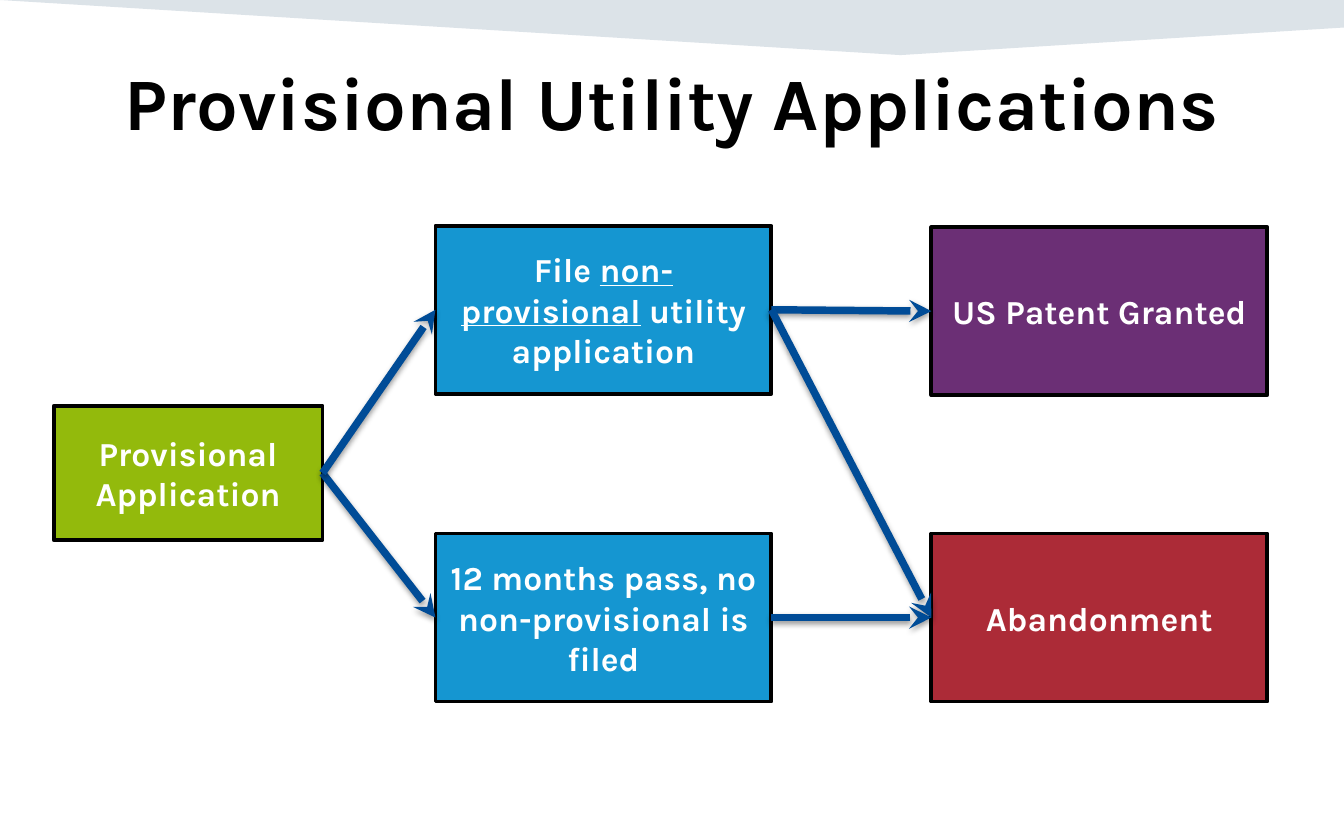
from dataclasses import dataclass

from lxml.etree import SubElement
from pptx import Presentation
from pptx.dml.color import RGBColor
from pptx.enum.shapes import MSO_CONNECTOR as Connector, MSO_SHAPE as Shape
from pptx.enum.text import MSO_ANCHOR as Anchor, MSO_AUTO_SIZE as AutoSize, PP_ALIGN as Align
from pptx.oxml.ns import qn
from pptx.util import Inches, Pt


@dataclass(frozen=True)
class Theme:
    font: str = "Karla"
    title_size: float = 39.6
    label_size: float = 18
    black: str = "000000"
    white: str = "FFFFFF"
    band: str = "164469"
    green: str = "93BA0C"
    blue: str = "1596D1"
    purple: str = "6B2F75"
    red: str = "AC2B37"
    arrow: str = "004C97"


THEME = Theme()
WIDTH, HEIGHT = 10, 6.25
LEFT_SIDE, RIGHT_SIDE = 1, 3


def rgb(value):
    return RGBColor.from_string(value)


def add_node(parent, tag, **attributes):
    return SubElement(parent, qn(tag), {key: str(value) for key, value in attributes.items()})


def write(frame, *parts, size, color, anchor, underlined=()):
    frame.word_wrap = True
    frame.auto_size = AutoSize.NONE
    frame.vertical_anchor = anchor
    paragraph = frame.paragraphs[0]
    paragraph.alignment = Align.CENTER
    for part in parts:
        run = paragraph.add_run()
        run.text = part
        run.font.name = THEME.font
        run.font.size = Pt(size)
        run.font.bold = True
        run.font.color.rgb = rgb(color)
        if part in underlined:
            run.font.underline = True


def draw_band(slide, width, height):
    corners = [(0, 0), (width, 0), (width, height / 2), (width * 0.67, height)]
    points = [(Inches(x), Inches(y)) for x, y in corners]
    builder = slide.shapes.build_freeform(*points[0])
    builder.add_line_segments(points[1:], close=True)
    band = builder.convert_to_shape()
    band.shadow.inherit = False
    band.fill.solid()
    band.fill.fore_color.rgb = rgb(THEME.band)
    band.line.fill.background()
    tint = band._element.spPr.find(qn("a:solidFill"))[0]
    add_node(tint, "a:alpha", val=15000)
    slide.shapes._spTree.insert(2, band._element)


def place_title(slide, box, text):
    title = slide.shapes.title
    title.left, title.top, title.width, title.height = map(Inches, box)
    title.text_frame.margin_top = Inches(0.08)
    write(title.text_frame, text, size=THEME.title_size, color=THEME.black, anchor=Anchor.TOP)


def add_step(slide, box, fill, *parts, underlined=()):
    step = slide.shapes.add_shape(Shape.RECTANGLE, *map(Inches, box))
    step.shadow.inherit = False
    step.fill.solid()
    step.fill.fore_color.rgb = rgb(fill)
    step.line.color.rgb = rgb(THEME.black)
    step.line.width = Pt(2)
    write(step.text_frame, *parts, size=THEME.label_size, color=THEME.white,
          anchor=Anchor.MIDDLE, underlined=underlined)
    return step


def add_arrow(slide, source, target):
    arrow = slide.shapes.add_connector(Connector.STRAIGHT, 0, 0, 0, 0)
    arrow.begin_connect(source, RIGHT_SIDE)
    arrow.end_connect(target, LEFT_SIDE)
    arrow.line.color.rgb = rgb(THEME.arrow)
    arrow.line.width = Pt(4)
    properties = arrow._element.spPr
    add_node(properties.find(qn("a:ln")), "a:tailEnd", type="stealth")
    effects = add_node(properties, "a:effectLst")
    shadow = add_node(effects, "a:outerShdw", blurRad=Pt(3.1), dist=Pt(1.6),
                      dir=5400000, rotWithShape=0)
    shadow_color = add_node(shadow, "a:srgbClr", val=THEME.black)
    add_node(shadow_color, "a:alpha", val=38000)


def draw_flow(slide, box):
    left, top, width, height = box
    step_width, step_height = 2.5, 1.25
    middle = left + 2.84
    right = left + width - step_width
    bottom = top + height - step_height

    def step_box(x, y):
        return x, y, step_width, step_height

    provisional = add_step(slide, (left, top + 1.34, 2, 1), THEME.green,
                           "Provisional Application")
    filing = add_step(slide, step_box(middle, top), THEME.blue,
                      "File ", "non-provisional", " utility application",
                      underlined=("non-provisional",))
    lapse = add_step(slide, step_box(middle, bottom), THEME.blue,
                     "12 months pass, no non-provisional is filed")
    granted = add_step(slide, step_box(right, top + 0.01), THEME.purple, "US Patent Granted")
    abandoned = add_step(slide, step_box(right, bottom), THEME.red, "Abandonment")

    for source, target in [(provisional, lapse), (provisional, filing), (filing, granted),
                           (filing, abandoned), (lapse, abandoned)]:
        add_arrow(slide, source, target)


def main():
    deck = Presentation()
    deck.slide_width, deck.slide_height = Inches(WIDTH), Inches(HEIGHT)
    slide = deck.slides.add_slide(deck.slide_layouts[5])
    draw_band(slide, WIDTH, 0.41)
    place_title(slide, (0.5, 0.34, WIDTH - 1, 1.04), "Provisional Utility Applications")
    draw_flow(slide, (0.4, 1.68, 9.03, 3.54))
    deck.save("out.pptx")


if __name__ == "__main__":
    main()
